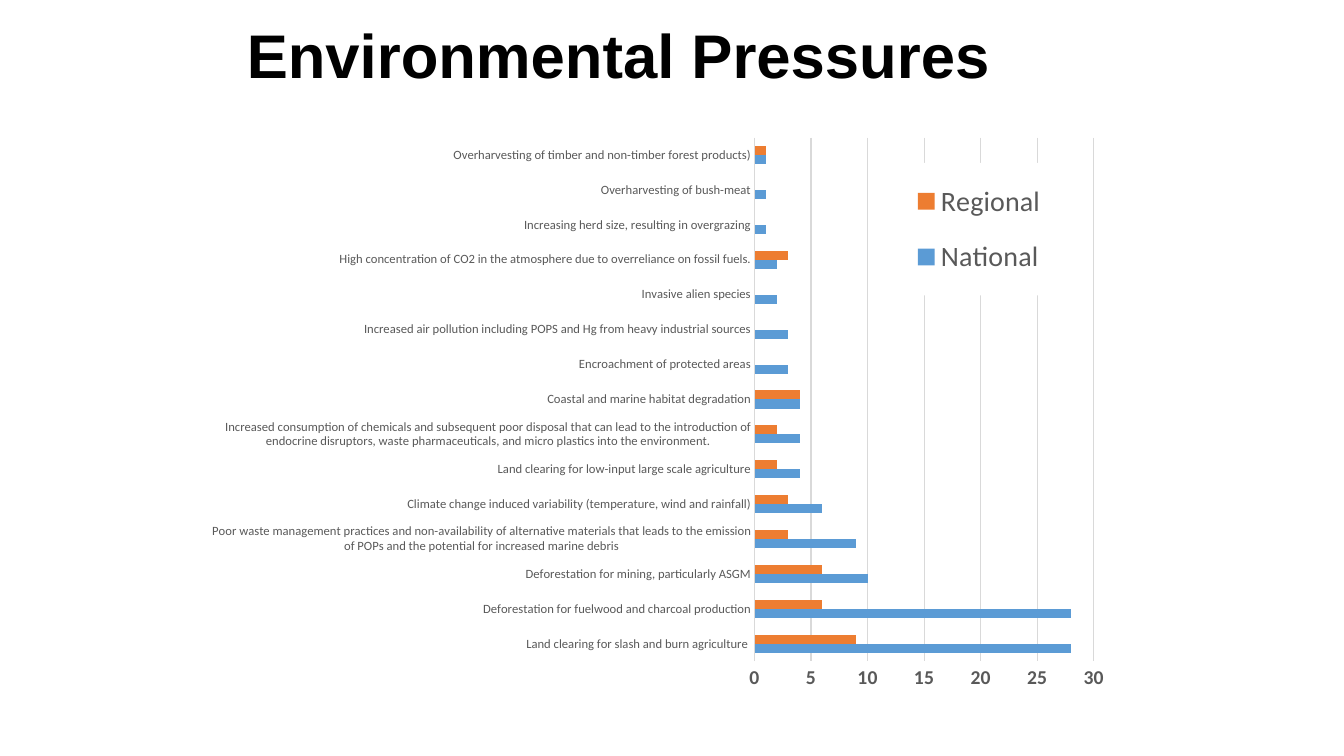
from dataclasses import dataclass

from lxml import etree
from pptx import Presentation
from pptx import util as u
from pptx.chart import data as cd
from pptx.dml import color as dc
from pptx.enum import chart as ec, text as et
from pptx.oxml import ns

HUES = {
    "ink": "000000",
    "gray": "595959",
    "grid": "D9D9D9",
    "blue": "5B9BD5",
    "orange": "ED7D31",
    "white": "FFFFFF",
}


@dataclass
class Row:
    label: str
    nation: int
    region: int | None = None


@dataclass
class Frame:
    x: float
    y: float
    w: float
    h: float


ROWS = [
    Row("Land clearing for slash and burn agriculture ", 28, 9),
    Row("Deforestation for fuelwood and charcoal production", 28, 6),
    Row("Deforestation for mining, particularly ASGM", 10, 6),
    Row("Poor waste management practices and non-availability of alternative "
        "materials that leads to the emission of POPs and the potential for "
        "increased marine debris", 9, 3),
    Row("Climate change induced variability (temperature, wind and rainfall)", 6, 3),
    Row("Land clearing for low-input large scale agriculture", 4, 2),
    Row("Increased consumption of chemicals and subsequent poor disposal that "
        "can lead to the introduction of endocrine disruptors, waste "
        "pharmaceuticals, and micro plastics into the environment.", 4, 2),
    Row("Coastal and marine habitat degradation", 4, 4),
    Row("Encroachment of protected areas", 3),
    Row("Increased air pollution including POPS and Hg from heavy industrial sources", 3),
    Row("Invasive alien species", 2),
    Row("High concentration of CO2 in the atmosphere due to overreliance on fossil fuels.", 2, 3),
    Row("Increasing herd size, resulting in overgrazing", 1),
    Row("Overharvesting of bush-meat", 1),
    Row("Overharvesting of timber and non-timber forest products)", 1, 1),
]

TITLE = Frame(2.35, 0.13, 8.62, 0.91)
CHART = Frame(2.03, 1.24, 9.09, 6.26)
PLOT = Frame(0.6, 0.02, 0.37, 0.83)
KEY = Frame(0.76, 0.06, 0.17, 0.21)


def rgb(name: str) -> dc.RGBColor:
    return dc.RGBColor.from_string(HUES[name])


def place(box: Frame) -> list[u.Length]:
    return [u.Inches(v) for v in (box.x, box.y, box.w, box.h)]


def style(font, size: float, hue: str, face: str = "Calibri", bold: bool = False) -> None:
    font.size, font.name, font.bold = u.Pt(size), face, bold
    font.color.rgb = rgb(hue)


def stroke(line) -> None:
    line.color.rgb = rgb("grid")
    line.width = u.Pt(0.75)


def lay_out(node, box: Frame, index: int, inner: bool = False) -> None:
    for old in node.findall(ns.qn("c:layout")):
        node.remove(old)
    layout = etree.Element(ns.qn("c:layout"))
    manual = etree.SubElement(layout, ns.qn("c:manualLayout"))
    parts = [("layoutTarget", "inner")] if inner else []
    parts += [("xMode", "edge"), ("yMode", "edge")]
    parts += [(key, str(getattr(box, key))) for key in ("x", "y", "w", "h")]
    for tag, val in parts:
        etree.SubElement(manual, ns.qn(f"c:{tag}")).set("val", val)
    node.insert(index, layout)


def add_title(slide) -> None:
    frame = slide.shapes.add_textbox(*place(TITLE)).text_frame
    frame.word_wrap = True
    frame.vertical_anchor = et.MSO_ANCHOR.MIDDLE
    frame.text = "Environmental Pressures"
    para = frame.paragraphs[0]
    para.line_spacing = 0.9
    style(para.runs[0].font, 44, "ink", "Arial", True)


def add_key(chart) -> None:
    chart.has_legend = True
    key = chart.legend
    key.position = ec.XL_LEGEND_POSITION.BOTTOM
    key.include_in_layout = True
    style(key.font, 20, "gray")
    node = key._element
    lay_out(node, KEY, 1)
    props = etree.Element(ns.qn("c:spPr"))
    fill = etree.SubElement(props, ns.qn("a:solidFill"))
    etree.SubElement(fill, ns.qn("a:srgbClr")).set("val", HUES["white"])
    node.find(ns.qn("c:overlay")).addnext(props)


def add_bars(slide) -> None:
    data = cd.CategoryChartData()
    data.categories = [row.label for row in ROWS]
    data.add_series("National", [row.nation for row in ROWS])
    data.add_series("Regional", [row.region for row in ROWS])
    kind = ec.XL_CHART_TYPE.BAR_CLUSTERED
    chart = slide.shapes.add_chart(kind, *place(CHART), data).chart
    chart.has_title = False
    style(chart.font, 10, "ink")

    plot = chart.plots[0]
    plot.gap_width, plot.overlap = 182, 0
    plot.vary_by_categories = False
    for bars, hue in zip(plot.series, ("blue", "orange")):
        bars.format.fill.solid()
        bars.format.fill.fore_color.rgb = rgb(hue)
        bars.invert_if_negative = False

    cats, vals = chart.category_axis, chart.value_axis
    for axis in (cats, vals):
        axis.major_tick_mark = axis.minor_tick_mark = ec.XL_TICK_MARK.NONE
    style(cats.tick_labels.font, 9, "gray")
    style(vals.tick_labels.font, 14, "gray", bold=True)
    stroke(cats.format.line)
    stroke(vals.major_gridlines.format.line)
    vals.format.line.fill.background()
    vals.minimum_scale, vals.maximum_scale, vals.major_unit = 0, 30, 5

    lay_out(chart._chartSpace.chart.plotArea, PLOT, 0, True)
    add_key(chart)


def main() -> None:
    deck = Presentation()
    deck.slide_width, deck.slide_height = u.Inches(13.33), u.Inches(7.5)
    slide = deck.slides.add_slide(deck.slide_layouts[6])
    add_title(slide)
    add_bars(slide)
    deck.save("out.pptx")


if __name__ == "__main__":
    main()
